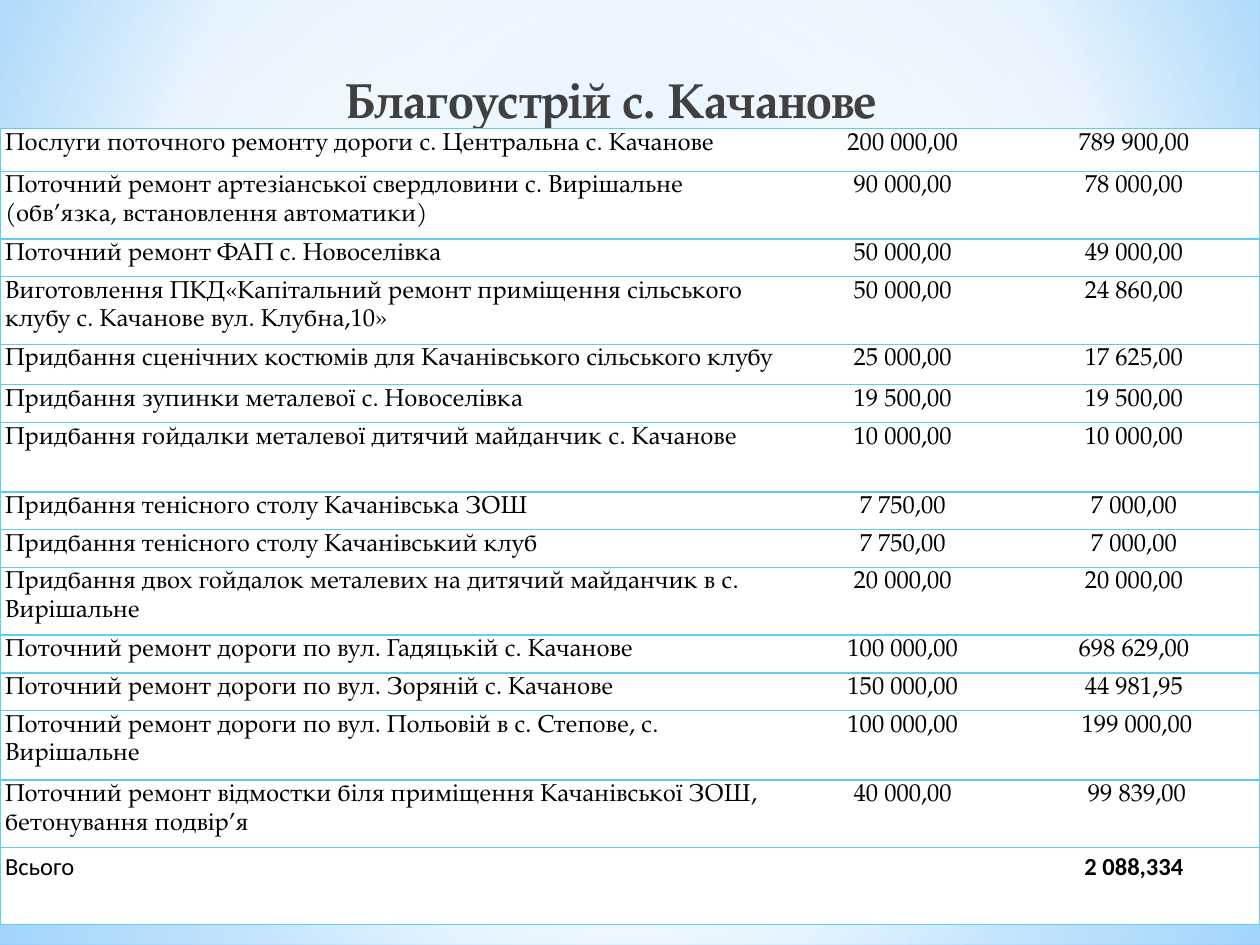
from itertools import product

from lxml import etree
from pptx import Presentation, util as u
from pptx.dml.color import RGBColor
from pptx.enum import shapes, text
from pptx.oxml import ns

WIDTH, HEIGHT = u.Inches(10), u.Inches(7.5)
COLORS = {
    "sky": "9ED5FF", "deep": "5BB9FF", "haze": "B4DCFA", "white": "FFFFFF",
    "title": "404040", "ink": "000000", "rule": "5ECCF3",
}
SERIF, SANS = "TeX Gyre Pagella", "Calibri"
CENTER = (50, 50, 50, 50)
COLUMNS = (6.33, 1.67, 2.0)
WORKS = [
    ("Послуги поточного ремонту дороги с. Центральна с. Качанове", "200 000,00", "789 900,00", 0.34),
    ("Поточний ремонт артезіанської свердловини с. Вирішальне (обв’язка, встановлення автоматики)",
     "90 000,00", "78 000,00", 0.52),
    ("Поточний ремонт ФАП с. Новоселівка", "50 000,00", "49 000,00", 0.3),
    ("Виготовлення ПКД«Капітальний ремонт приміщення сільського клубу с. Качанове вул. Клубна,10»",
     "50 000,00", "24 860,00", 0.47),
    ("Придбання сценічних костюмів для Качанівського сільського клубу", "25 000,00", "17 625,00", 0.32),
    ("Придбання зупинки металевої с. Новоселівка", "19 500,00", "19 500,00", 0.3),
    ("Придбання гойдалки металевої дитячий майданчик с. Качанове", "10 000,00", "10 000,00", 0.55),
    ("Придбання тенісного столу Качанівська ЗОШ", "7 750,00", "7 000,00", 0.3),
    ("Придбання тенісного столу Качанівський клуб", "7 750,00", "7 000,00", 0.3),
    ("Придбання двох гойдалок металевих на дитячий майданчик в с. Вирішальне",
     "20 000,00", "20 000,00", 0.52),
    ("Поточний ремонт дороги по вул. Гадяцькій с. Качанове", "100 000,00", "698 629,00", 0.3),
    ("Поточний ремонт дороги по вул. Зоряній с. Качанове", "150 000,00", "44 981,95", 0.3),
    ("Поточний ремонт дороги по вул. Польовій в с. Степове, с. Вирішальне",
     "100 000,00", " 199 000,00", 0.55),
    ("Поточний ремонт відмостки біля приміщення Качанівської ЗОШ, бетонування подвір’я",
     "40 000,00", " 99 839,00", 0.49),
    ("Всього", "", "2 088,334", 0.61),
]


def share(left, top, width, height):
    return [round(part * whole) for part, whole in
            zip((left, top, width, height), (WIDTH, HEIGHT, WIDTH, HEIGHT))]


def add(parent, tag, **attributes):
    return etree.SubElement(parent, ns.qn(tag), {k: str(v) for k, v in attributes.items()})


def paint_gradient(fill, holder, stops, focus=None):
    fill.gradient()
    gradient = holder.find(".//" + ns.qn("a:gradFill"))
    for child in list(gradient):
        gradient.remove(child)
    stop_list = add(gradient, "a:gsLst")
    for position, color, opacity in stops:
        stop = add(stop_list, "a:gs", pos=position * 1000)
        tint = add(stop, "a:srgbClr", val=COLORS[color])
        add(tint, "a:alpha", val=opacity * 1000)
    if focus:
        circle = add(gradient, "a:path", path="circle")
        add(circle, "a:fillToRect", **{side: value * 1000 for side, value in zip("ltrb", focus)})
    else:
        add(gradient, "a:lin", ang=90 * 60000, scaled=0)


def add_glow(slide, preset, box, stops, focus=None):
    glow = slide.shapes.add_shape(preset, *box)
    glow.shadow.inherit = False
    glow.line.fill.background()
    paint_gradient(glow.fill, glow.element.spPr, stops, focus)


def add_backdrop(slide):
    paint_gradient(slide.background.fill, slide.element,
                   [(0, "sky", 100), (60, "white", 100), (100, "deep", 100)], (20, 10, 20, 60))
    rectangle, ellipse = shapes.MSO_SHAPE.RECTANGLE, shapes.MSO_SHAPE.OVAL
    horizon = 0.744
    add_glow(slide, rectangle, share(0, horizon, 1, 1 - horizon),
             [(0, "white", 91), (37, "white", 76), (100, "haze", 79)], CENTER)
    add_glow(slide, rectangle, share(0, 0, 1, horizon),
             [(0, "white", 89), (48, "white", 62), (100, "haze", 79)], CENTER)
    add_glow(slide, rectangle, share(0, 0.55, 1, 0.333),
             [(0, "white", 0), (29, "white", 30), (45, "haze", 40),
              (55, "white", 26), (65, "haze", 60), (100, "white", 0)])
    add_glow(slide, ellipse, share(0, 0.233, 1, horizon),
             [(0, "white", 100), (56, "white", 0)], CENTER)


def add_run(paragraph, words, font, size, color, bold=False):
    run = paragraph.add_run()
    run.text = words
    run.font.name, run.font.size, run.font.bold = font, u.Pt(size), bold
    run.font.color.rgb = RGBColor.from_string(COLORS[color])


def add_heading(slide, box):
    frame = slide.shapes.add_textbox(*box).text_frame
    frame.word_wrap = True
    frame.vertical_anchor = text.MSO_ANCHOR.BOTTOM
    frame.margin_top = frame.margin_bottom = 0
    heading = frame.paragraphs[0]
    heading.alignment = text.PP_ALIGN.CENTER
    add_run(heading, "Благоустрій с. Качанове", SERIF, 28, "title", True)


def rule_cell(cell, ruled_sides):
    properties = cell._tc.get_or_add_tcPr()
    for index, side in enumerate("LRTB"):
        line = etree.Element(ns.qn(f"a:ln{side}"), w=str(u.Pt(1)))
        if side in ruled_sides:
            add(add(line, "a:solidFill"), "a:srgbClr", val=COLORS["rule"])
        else:
            add(line, "a:noFill")
        properties.insert(index, line)


def fill_cell(cell, words, column, is_total):
    cell.fill.solid()
    cell.fill.fore_color.rgb = RGBColor.from_string(COLORS["white"])
    cell.margin_left = cell.margin_right = u.Inches(0.04)
    cell.margin_top = cell.margin_bottom = 0
    rule_cell(cell, ("LTB", "TB", "RTB")[column])
    entry = cell.text_frame.paragraphs[0]
    entry.line_spacing = 1.15
    entry.alignment = text.PP_ALIGN.CENTER if column else text.PP_ALIGN.LEFT
    if words:
        add_run(entry, words, SANS if is_total else SERIF, 14, "ink", is_total and column == 2)


def add_works(slide, box):
    works = slide.shapes.add_table(len(WORKS), len(COLUMNS), *box).table
    works.first_row = works.horz_banding = False
    row_total = sum(work[-1] for work in WORKS)
    for column, portion in zip(works.columns, COLUMNS):
        column.width = round(box[2] * portion / sum(COLUMNS))
    for row, work in zip(works.rows, WORKS):
        row.height = round(box[3] * work[-1] / row_total)
    last = len(WORKS) - 1
    for row, column in product(range(len(WORKS)), range(len(COLUMNS))):
        fill_cell(works.cell(row, column), WORKS[row][column], column, row == last)
    works.cell(last, 0).merge(works.cell(last, 1))


def main():
    deck = Presentation()
    deck.slide_width, deck.slide_height = WIDTH, HEIGHT
    slide = deck.slides.add_slide(deck.slide_layouts[6])
    add_backdrop(slide)
    add_heading(slide, share(0.062, 0.063, 0.846, 0.073))
    add_works(slide, share(0, 0.136, 1, 0.823))
    deck.save("out.pptx")


if __name__ == "__main__":
    main()
